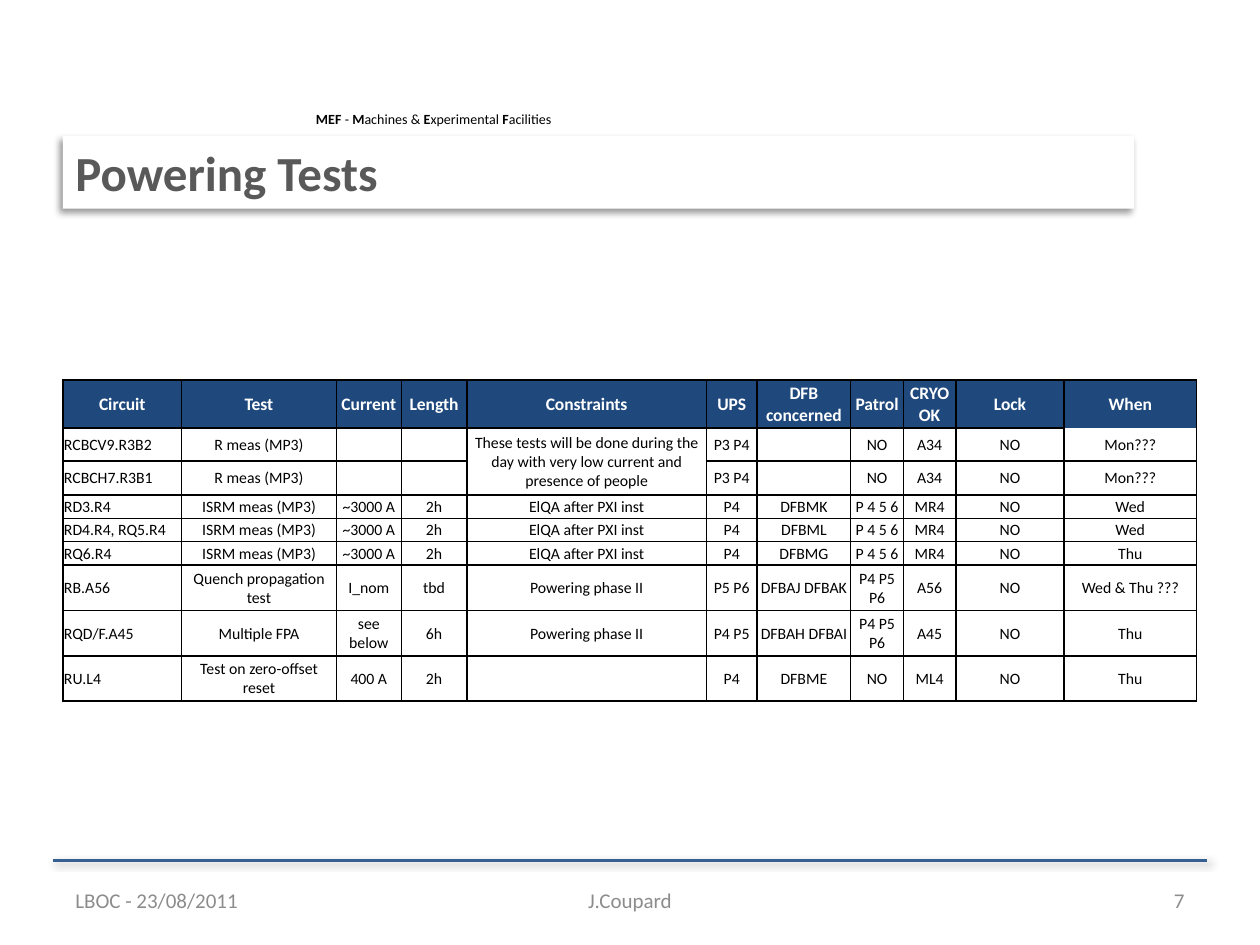
from lxml import etree
from pptx import Presentation, util as u
from pptx.dml.color import RGBColor
from pptx.enum import shapes, text
from pptx.oxml import parse_xml
from pptx.oxml.ns import nsdecls, qn

# Content
TITLE = "Powering Tests"
BANNER = [("MEF ", True), ("- ", False), ("M", True), ("achines & ", False),
          ("E", True), ("xperimental ", False), ("F", True), ("acilities", False)]
LEFT, CENTER, RIGHT = text.PP_ALIGN.LEFT, text.PP_ALIGN.CENTER, text.PP_ALIGN.RIGHT
FOOTERS = [("LBOC - 23/08/2011", 1.27, 5.92, LEFT),
           ("J.Coupard", 8.68, 8.04, CENTER),
           ("7", 18.2, 5.93, RIGHT)]
COLUMNS = [("Circuit", 2.39), ("Test", 3.12), ("Current", 1.31), ("Length", 1.32),
           ("Constraints", 4.83), ("UPS", 1.02), ("DFB concerned", 1.89),
           ("Patrol", 1.06), ("CRYO OK", 1.06), ("Lock", 2.18), ("When", 2.67)]
LOW_CURRENT = "These tests will be done during the day with very low current and presence of people"
ISRM = ("ISRM meas (MP3)", "~3000 A", "2h", "ElQA after PXI inst", "P4")
TESTS = [
    ("RCBCV9.R3B2", "R meas (MP3)", "", "", LOW_CURRENT, "P3 P4", "", "NO", "A34", "NO", "Mon???"),
    ("RCBCH7.R3B1", "R meas (MP3)", "", "", "", "P3 P4", "", "NO", "A34", "NO", "Mon???"),
    ("RD3.R4", *ISRM, "DFBMK", "P 4 5 6", "MR4", "NO", "Wed"),
    ("RD4.R4, RQ5.R4", *ISRM, "DFBML", "P 4 5 6", "MR4", "NO", "Wed"),
    ("RQ6.R4", *ISRM, "DFBMG", "P 4 5 6", "MR4", "NO", "Thu"),
    ("RB.A56", "Quench propagation test", "I_nom", "tbd", "Powering phase II", "P5 P6",
     "DFBAJ DFBAK", "P4 P5 P6", "A56", "NO", "Wed & Thu ???"),
    ("RQD/F.A45", "Multiple FPA", "see below", "6h", "Powering phase II", "P4 P5",
     "DFBAH DFBAI", "P4 P5 P6", "A45", "NO", "Thu"),
    ("RU.L4", "Test on zero-offset reset", "400 A", "2h", "", "P4", "DFBME", "NO", "ML4", "NO", "Thu"),
]
ROW_HEIGHTS = [0.97, 0.66, 0.69, 0.47, 0.47, 0.47, 0.92, 0.92, 0.9]


def color(value):
    return RGBColor.from_string(value)


def format_paragraph(paragraph, size, font_color, bold=False, align=LEFT):
    paragraph.alignment = align
    for run in paragraph.runs:
        run.font.name, run.font.size, run.font.bold = "Calibri", u.Pt(size), bold
        run.font.color.rgb = color(font_color)


def set_shadow(shape, distance, angle):
    properties = shape._element.spPr
    for old in properties.findall(qn("a:effectLst")):
        properties.remove(old)
    properties.append(parse_xml(
        f'<a:effectLst {nsdecls("a")}><a:outerShdw blurRad="{u.Pt(4)}" dist="{u.Pt(distance)}" '
        f'dir="{angle * 60000}" algn="tl" rotWithShape="0"><a:srgbClr val="000000">'
        '<a:alpha val="40000"/></a:srgbClr></a:outerShdw></a:effectLst>'))


def set_borders(cell, hidden=""):
    properties = cell._tc.get_or_add_tcPr()
    for side in "LRTB":
        fill = ("<a:noFill/>" if side == hidden else
                '<a:solidFill><a:srgbClr val="000000"/></a:solidFill>')
        properties.append(parse_xml(
            f'<a:ln{side} {nsdecls("a")} w="{u.Pt(1)}">{fill}</a:ln{side}>'))


def add_text_box(slide, left, top, width, height, wrap=True):
    frame = slide.shapes.add_textbox(
        u.Cm(left), u.Cm(top), u.Cm(width), u.Cm(height)).text_frame
    frame.word_wrap = wrap
    return frame


presentation = Presentation()
presentation.slide_width, presentation.slide_height = u.Cm(25.4), u.Cm(19.05)
slide = presentation.slides.add_slide(presentation.slide_layouts[6])

# Footer rule
rule = slide.shapes.add_connector(shapes.MSO_CONNECTOR.STRAIGHT,
                                  u.Cm(1.06), u.Cm(17.35), u.Cm(24.34), u.Cm(17.35))
rule.line.color.rgb = color("376092")
rule.line.width = u.Pt(1.5)
set_shadow(rule, 2, 45)

# Department banner
banner = add_text_box(slide, 6.12, 2.11, 5.31, 0.6, wrap=False).paragraphs[0]
for words, bold in BANNER:
    banner.add_run().text = words
format_paragraph(banner, 8, "000000")
for run, (_, bold) in zip(banner.runs, BANNER):
    run.font.bold = bold

# Title bar
title = slide.shapes.add_shape(shapes.MSO_SHAPE.RECTANGLE,
                               u.Cm(1.27), u.Cm(2.74), u.Cm(21.59), u.Cm(1.47))
title.fill.solid()
title.fill.fore_color.rgb = color("FFFFFF")
title.line.fill.background()
set_shadow(title, 3, 135)
title.text_frame.text = TITLE
title.text_frame.word_wrap = True
title.text_frame.vertical_anchor = text.MSO_ANCHOR.MIDDLE
format_paragraph(title.text_frame.paragraphs[0], 28, "595959", bold=True)

# Footers
for words, left, width, align in FOOTERS:
    frame = add_text_box(slide, left, 17.65, width, 1.01)
    frame.text = words
    frame.vertical_anchor = text.MSO_ANCHOR.MIDDLE
    format_paragraph(frame.paragraphs[0], 12, "8C8C8C", align=align)

# Test table
rows = [[name for name, _ in COLUMNS], *TESTS]
widths = [width for _, width in COLUMNS]
table = slide.shapes.add_table(len(rows), len(COLUMNS), u.Cm(1.27), u.Cm(7.66),
                               u.Cm(sum(widths)), u.Cm(sum(ROW_HEIGHTS))).table
table.first_row = table.horz_banding = False
for column, width in zip(table.columns, widths):
    column.width = u.Cm(width)
for row, height in zip(table.rows, ROW_HEIGHTS):
    row.height = u.Cm(height)

last = len(COLUMNS) - 1
open_sides = {(0, last): "B", (1, last): "T"}  # no line between When and its first entry
for r, values in enumerate(rows):
    for c, value in enumerate(values):
        cell, header = table.cell(r, c), r == 0
        cell.margin_left = cell.margin_right = cell.margin_top = u.Cm(0.02)
        cell.margin_bottom = 0
        cell.vertical_anchor = text.MSO_ANCHOR.MIDDLE
        set_borders(cell, open_sides.get((r, c), ""))
        if header:
            cell.fill.solid()
            cell.fill.fore_color.rgb = color("1F497D")
        else:
            cell.fill.background()
        paragraph = cell.text_frame.paragraphs[0]
        if value:
            paragraph.text = value
            format_paragraph(paragraph, 10 if header else 9, "FFFFFF" if header else "000000",
                             header, CENTER if header or c else LEFT)
        else:  # keeps empty cells from stretching their row
            etree.SubElement(paragraph._p, qn("a:endParaRPr")).set("sz", "900")
table.cell(1, 4).merge(table.cell(2, 4))

presentation.save("out.pptx")
